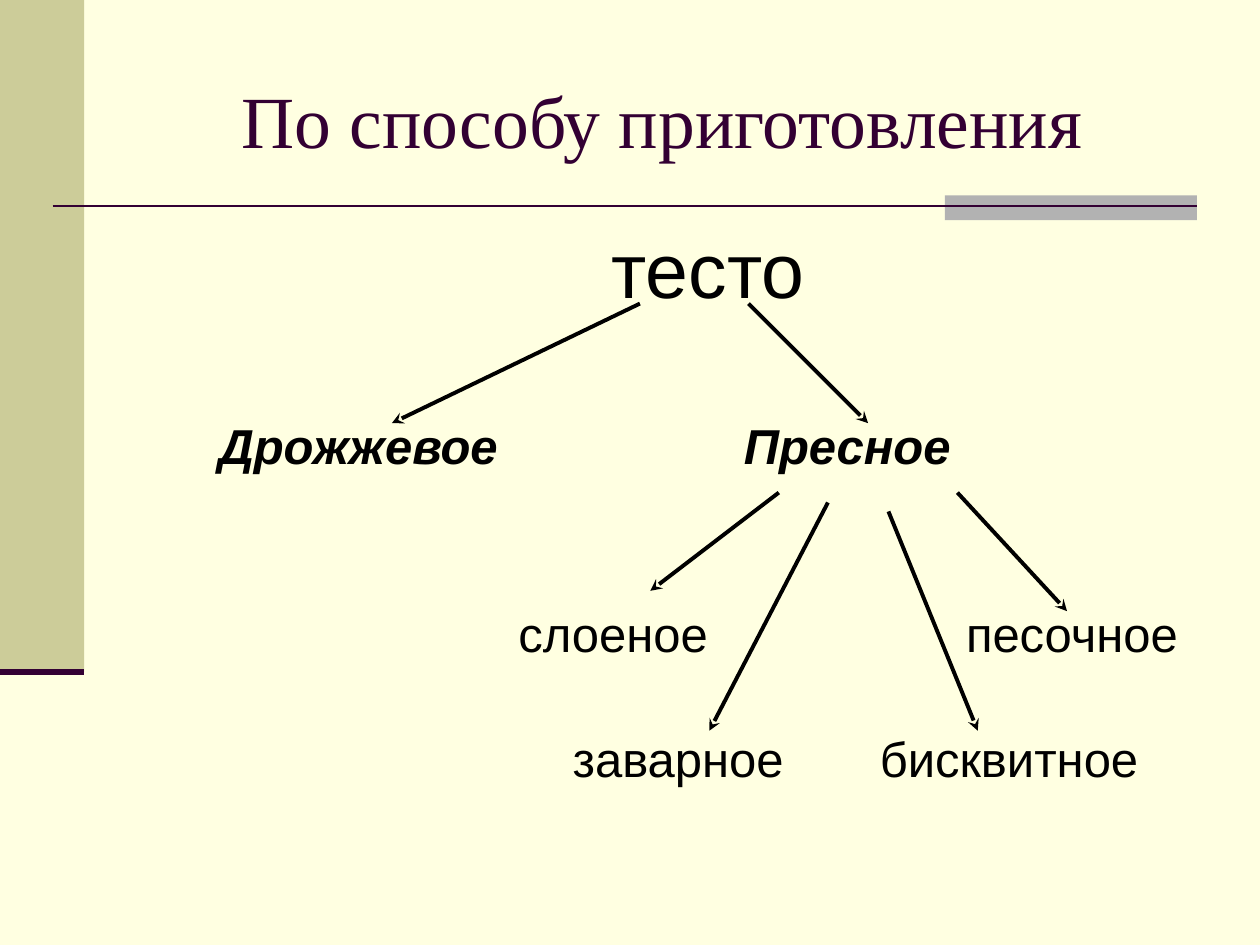
from lxml.etree import SubElement
from pptx import Presentation
from pptx.dml.color import RGBColor
from pptx.enum.shapes import MSO_CONNECTOR as LINK, MSO_SHAPE as SHAPE
from pptx.enum.text import MSO_ANCHOR as ANCHOR, PP_ALIGN as ALIGN
from pptx.oxml.ns import qn
from pptx.util import Cm, Pt

CREAM = RGBColor(0xFF, 0xFF, 0xE1)
OLIVE = RGBColor(0xCC, 0xCC, 0x99)
GRAY = RGBColor(0xB2, 0xB2, 0xB2)
PLUM = RGBColor(0x33, 0x00, 0x33)
BLACK = RGBColor(0, 0, 0)

deck = Presentation()
deck.slide_width, deck.slide_height = Cm(25.4), Cm(19.05)
slide = deck.slides.add_slide(deck.slide_layouts[6])
slide.background.fill.solid()
slide.background.fill.fore_color.rgb = CREAM


def add_line(x1, y1, x2, y2, color, width):
    line = slide.shapes.add_connector(
        LINK.STRAIGHT, Cm(x1), Cm(y1), Cm(x2), Cm(y2))
    line.line.color.rgb = color
    line.line.width = Pt(width)
    SubElement(line._element.spPr, qn("a:effectLst"))
    return line


def add_label(text, x, y, wide, high, size, font="Arial", color=BLACK, strong=False):
    """Place one line of text centred on the point x, y."""
    box = slide.shapes.add_textbox(
        Cm(x - wide / 2), Cm(y - high / 2), Cm(wide), Cm(high))
    frame = box.text_frame
    frame.word_wrap = True
    frame.vertical_anchor = ANCHOR.MIDDLE
    frame.margin_left = frame.margin_right = 0
    frame.margin_top = frame.margin_bottom = 0
    para = frame.paragraphs[0]
    para.alignment = ALIGN.CENTER
    run = para.add_run()
    run.text = text
    run.font.name = font
    run.font.size = Pt(size)
    run.font.color.rgb = color
    run.font.bold = run.font.italic = strong


# Side band, accent block and rules
for x, y, wide, high, color in [
    (0, 0, 1.7, 13.55, OLIVE),
    (19.05, 3.94, 5.08, 0.5, GRAY),
]:
    block = slide.shapes.add_shape(SHAPE.RECTANGLE, Cm(x), Cm(y), Cm(wide), Cm(high))
    block.shadow.inherit = False
    block.fill.solid()
    block.fill.fore_color.rgb = color
    block.line.fill.background()
add_line(1.06, 4.15, 24.13, 4.15, PLUM, 1.5)
add_line(0, 13.55, 1.7, 13.55, PLUM, 3.5)

# Title and the tree of dough kinds
add_label("По способу приготовления", 13.34, 2.4, 21.59, 3.18, 42,
          "Times New Roman", PLUM)
add_label("тесто", 14.27, 5.39, 6, 2, 44)
for text, x, y, strong in [
    ("Дрожжевое", 7.22, 8.97, True),
    ("Пресное", 17.08, 8.97, True),
    ("слоеное", 12.36, 12.76, False),
    ("песочное", 21.61, 12.76, False),
    ("заварное", 13.67, 15.28, False),
    ("бисквитное", 20.34, 15.28, False),
]:
    add_label(text, x, y, 6, 1.2, 28, strong=strong)

# Arrows from each kind to its branches
for ends in [
    (15.7, 9.93, 13.11, 11.91),
    (16.69, 10.13, 14.3, 14.73),
    (17.91, 10.31, 19.71, 14.73),
    (19.3, 9.93, 21.51, 12.32),
    (12.9, 6.12, 7.9, 8.53),
    (15.09, 6.12, 17.5, 8.53),
]:
    arrow = add_line(*ends, BLACK, 2.25)
    SubElement(arrow.line._get_or_add_ln(), qn("a:tailEnd"), type="stealth")

deck.save("out.pptx")
